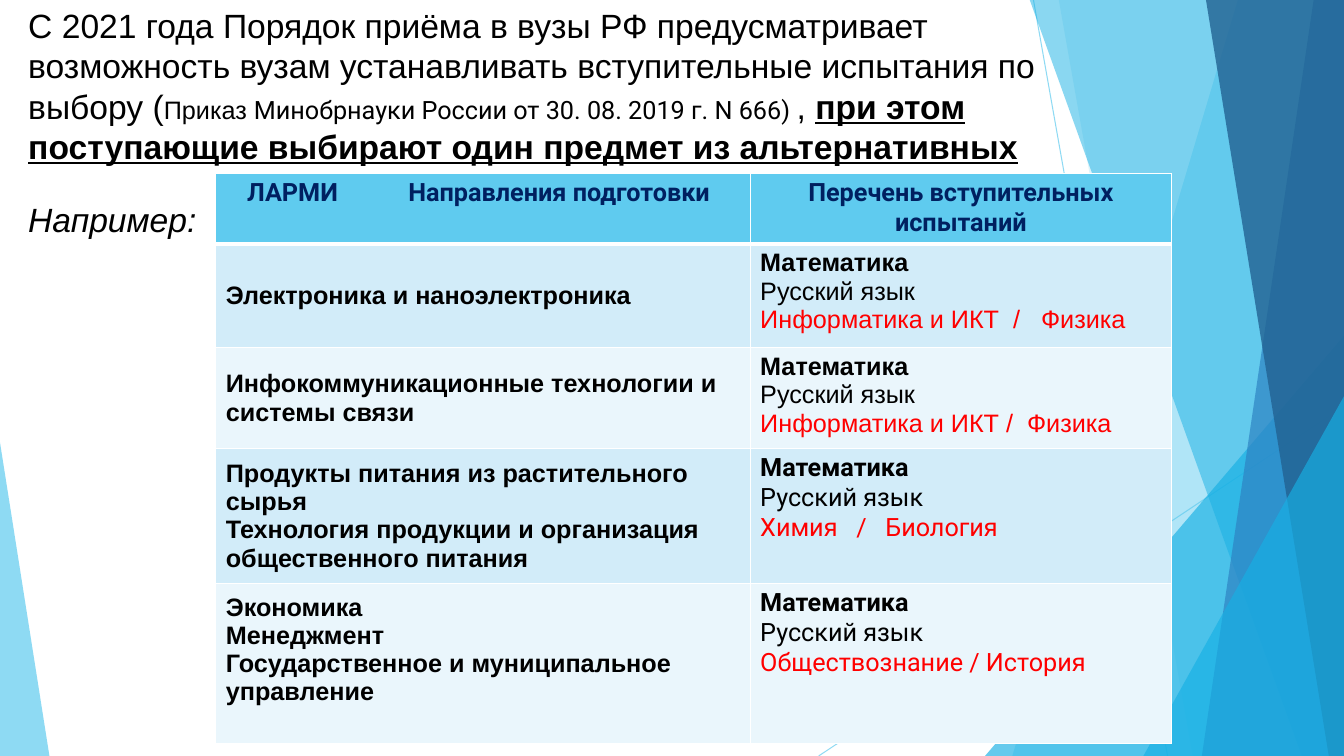
import pptx
import pptx.util
import pptx.dml.color
import pptx.enum.shapes
import pptx.enum.text
import pptx.oxml
import pptx.oxml.ns
from lxml import etree

Inches = pptx.util.Inches
Pt = pptx.util.Pt
SHAPE = pptx.enum.shapes.MSO_SHAPE
ALIGN = pptx.enum.text.PP_ALIGN
ANCHOR = pptx.enum.text.MSO_ANCHOR
qn = pptx.oxml.ns.qn

COLORS = {
    "sky": "5FCBEF", "cyan": "17B0E4", "blue": "2E83C3", "deep": "226292",
    "navy": "002060", "red": "FF0000", "black": "000000", "white": "FFFFFF",
    "band": "D2ECF9", "pale": "EAF6FC",
}
WIDE, HIGH = 13.33, 7.5


class Deck:
    """Holds the style and the current slide."""

    def __init__(self):
        self.prs = pptx.Presentation()
        self.prs.slide_width = Inches(WIDE)
        self.prs.slide_height = Inches(HIGH)
        self.slide = self.prs.slides.add_slide(self.prs.slide_layouts[5])
        self.shapes = self.slide.shapes

    def color(self, name):
        return pptx.dml.color.RGBColor.from_string(COLORS[name])

    def fade(self, item, alpha):
        for tint in item.iter(qn("a:srgbClr")):
            etree.SubElement(tint, qn("a:alpha")).set("val", str(alpha * 1000))

    def paint(self, shape, name, alpha):
        shape.shadow.inherit = False
        shape.line.fill.background()
        shape.fill.solid()
        shape.fill.fore_color.rgb = self.color(name)
        self.fade(shape.element.spPr, alpha)

    def line(self, x1, y1, x2, y2, name, alpha):
        line = self.shapes.add_connector(
            pptx.enum.shapes.MSO_CONNECTOR.STRAIGHT,
            Inches(x1), Inches(y1), Inches(x2), Inches(y2))
        line.line.width = Pt(0.75)
        line.line.color.rgb = self.color(name)
        self.fade(line.element.spPr, alpha)
        etree.SubElement(line.element.spPr, qn("a:effectLst"))

    def panel(self, top, base, name, alpha):
        """Fill from a slanted left edge to the right side of the slide."""
        edge = [(WIDE, -0.01), (WIDE, HIGH), (base, HIGH)]
        form = self.shapes.build_freeform(Inches(top), Inches(-0.01))
        form.add_line_segments([(Inches(x), Inches(y)) for x, y in edge])
        self.paint(form.convert_to_shape(), name, alpha)

    def wedge(self, x, y, width, tip, name, alpha):
        """Triangle that stands on the bottom of the slide."""
        shape = self.shapes.add_shape(
            SHAPE.ISOSCELES_TRIANGLE, Inches(x), Inches(y),
            Inches(width), Inches(HIGH - y))
        shape.adjustments[0] = tip
        self.paint(shape, name, alpha)

    def style(self, run, size=18, font="Arial", color="black", bold=False,
              italic=False, under=False):
        run.font.size = Pt(size)
        run.font.name = font
        run.font.color.rgb = self.color(color)
        run.font.bold = bold
        run.font.italic = italic
        run.font.underline = under

    def title(self, x, y, width, height, parts, note):
        title = self.shapes.title
        title.left, title.top = Inches(x), Inches(y)
        title.width, title.height = Inches(width), Inches(height)
        self.shapes.element.append(title.element)  # text above the panels
        frame = title.text_frame
        frame.word_wrap = True
        frame.auto_size = pptx.enum.text.MSO_AUTO_SIZE.NONE
        frame.vertical_anchor = ANCHOR.TOP
        lead, last = frame.paragraphs[0], frame.add_paragraph()
        lead.alignment = last.alignment = ALIGN.LEFT
        for text, look in parts:
            run = lead.add_run()
            run.text = text
            self.style(run, **look)
        last.text = note
        last.space_before = Pt(23)
        self.style(last.runs[0], size=24, italic=True)

    def table(self, x, y, cols, rows):
        frame = self.shapes.add_table(
            len(rows), len(cols), Inches(x), Inches(y),
            Inches(sum(cols)), Inches(sum(rows)))
        for col, width in zip(frame.table.columns, cols):
            col.width = Inches(width)
        for row, height in zip(frame.table.rows, rows):
            row.height = Inches(height)
        return frame.table

    def cell(self, cell, lines, fill, looks, top=1, base=1):
        cell.text_frame.text = "\n".join(lines)
        for para, look in zip(cell.text_frame.paragraphs, looks):
            for run in para.runs:
                self.style(run, **look)
        props = cell._tc.get_or_add_tcPr()
        for side, width in zip("LRTB", (1, 1, top, base)):
            edge = etree.SubElement(props, qn("a:ln" + side), w=str(Pt(width)))
            solid = etree.SubElement(edge, qn("a:solidFill"))
            etree.SubElement(solid, qn("a:srgbClr"), val=COLORS["white"])
        cell.fill.solid()
        cell.fill.fore_color.rgb = self.color(fill)


def main():
    deck = Deck()

    # Side decoration, back to front
    deck.line(10.25, 0, 11.58, HIGH, "sky", 70)
    deck.line(WIDE, 4.03, 8.12, HIGH, "sky", 70)
    deck.panel(12.28, 10.04, "sky", 36)
    deck.panel(10.5, 11.83, "sky", 20)
    deck.wedge(9.77, 3.33, 3.56, 1, "cyan", 66)
    deck.panel(10.21, 12.91, "cyan", 50)
    deck.panel(13.03, 11.92, "blue", 70)
    deck.panel(11.96, 13.18, "deep", 80)
    deck.wedge(11.34, 3.93, 1.99, 1, "cyan", 66)
    deck.wedge(0, 4.39, 0.49, 0, "sky", 70)

    # Title
    deck.title(0.18, 0, 11, 2.46, [
        ("С 2021 года Порядок приёма в вузы РФ предусматривает возможность "
         "вузам устанавливать вступительные испытания по выбору (",
         {"size": 24}),
        ("Приказ ", {}),
        ("Минобрнауки России от 30. 08. 2019 г. N 666) ", {"font": "Roboto"}),
        (", ", {"size": 24}),
        ("при этом поступающие выбирают один предмет из альтернативных",
         {"size": 24, "bold": True, "under": True}),
    ], "Например:")

    # Table header
    grid = deck.table(2.14, 1.72, [5.3, 4.18], [0.7, 1.03, 1, 1.34, 1.59])
    head = {"font": "Roboto", "color": "navy", "bold": True}
    names = ["ЛАРМИ\tНаправления подготовки", "Перечень вступительных испытаний"]
    for col, name in enumerate(names):
        deck.cell(grid.cell(0, col), [name], "sky", [head], base=3)
    first = grid.cell(0, 0)
    first.margin_left = Inches(0.31)
    tabs = etree.SubElement(
        first.text_frame.paragraphs[0]._p.get_or_add_pPr(), qn("a:tabLst"))
    etree.SubElement(tabs, qn("a:tab"), pos=str(Inches(1.6)), algn="l")
    grid.cell(0, 1).text_frame.paragraphs[0].alignment = ALIGN.CENTER

    # Table body: fields of study, choice of exam, font of the exams
    body = [
        (["Электроника и наноэлектроника"],
         "Информатика и ИКТ  /   Физика", "Arial"),
        (["Инфокоммуникационные технологии и системы связи"],
         "Информатика и ИКТ /  Физика", "Arial"),
        (["Продукты питания из растительного сырья",
          "Технология продукции и организация общественного питания"],
         "Химия   /   Биология", "Roboto"),
        (["Экономика", "Менеджмент",
          "Государственное и муниципальное управление"],
         "Обществознание / История", "Roboto"),
    ]
    for row, (fields, choice, font) in enumerate(body, 1):
        fill = "band" if row % 2 else "pale"
        top = 3 if row == 1 else 1
        left, right = grid.cell(row, 0), grid.cell(row, 1)
        deck.cell(left, fields, fill, [{"bold": True}] * len(fields), top)
        left.vertical_anchor = ANCHOR.MIDDLE
        looks = [{"font": font, "bold": True}, {"font": font},
                 {"font": font, "color": "red"}]
        deck.cell(right, ["Математика", "Русский язык", choice], fill, looks, top)
    grid.cell(len(body), 0).margin_bottom = Inches(0.33)

    deck.prs.save("out.pptx")


if __name__ == "__main__":
    main()
